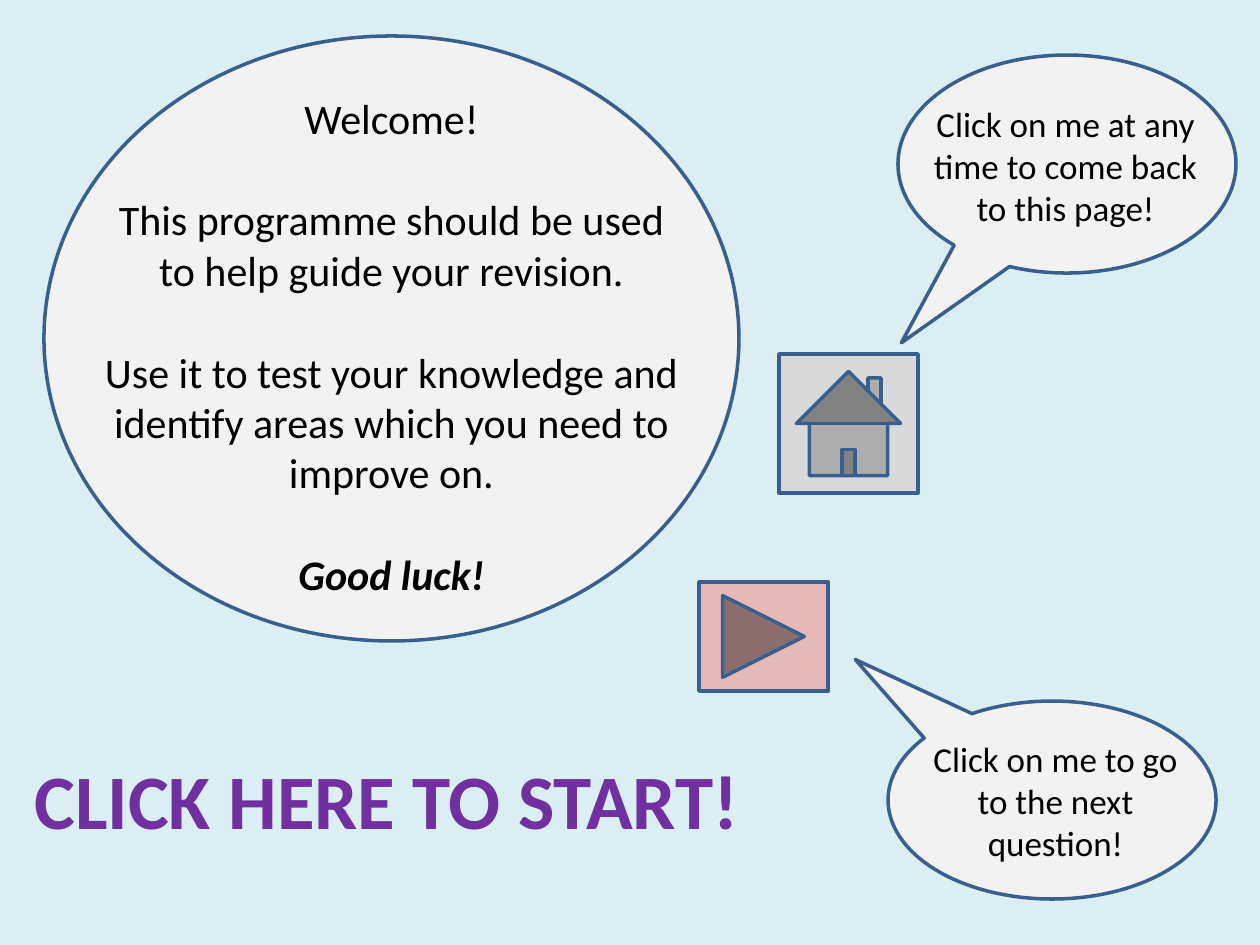
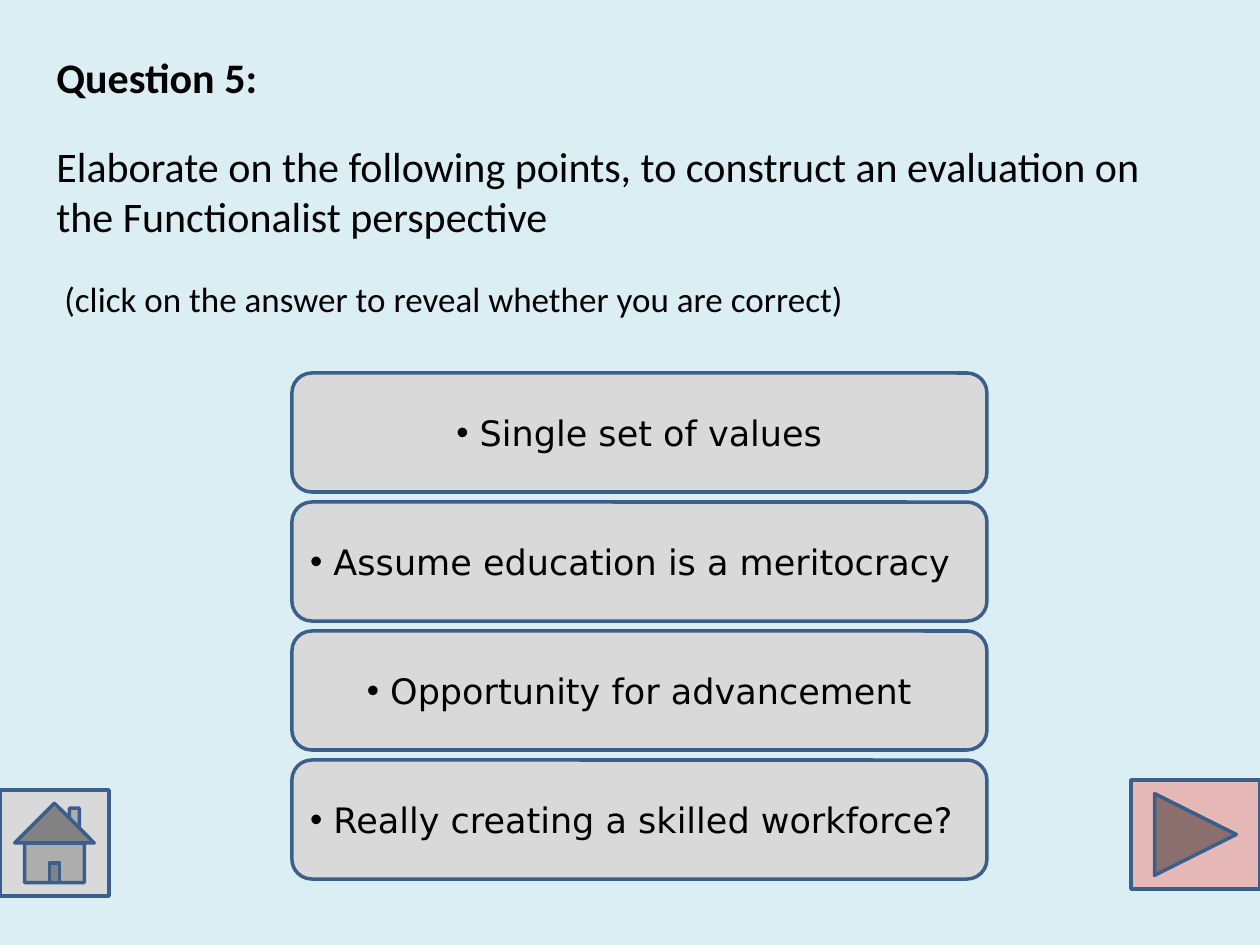
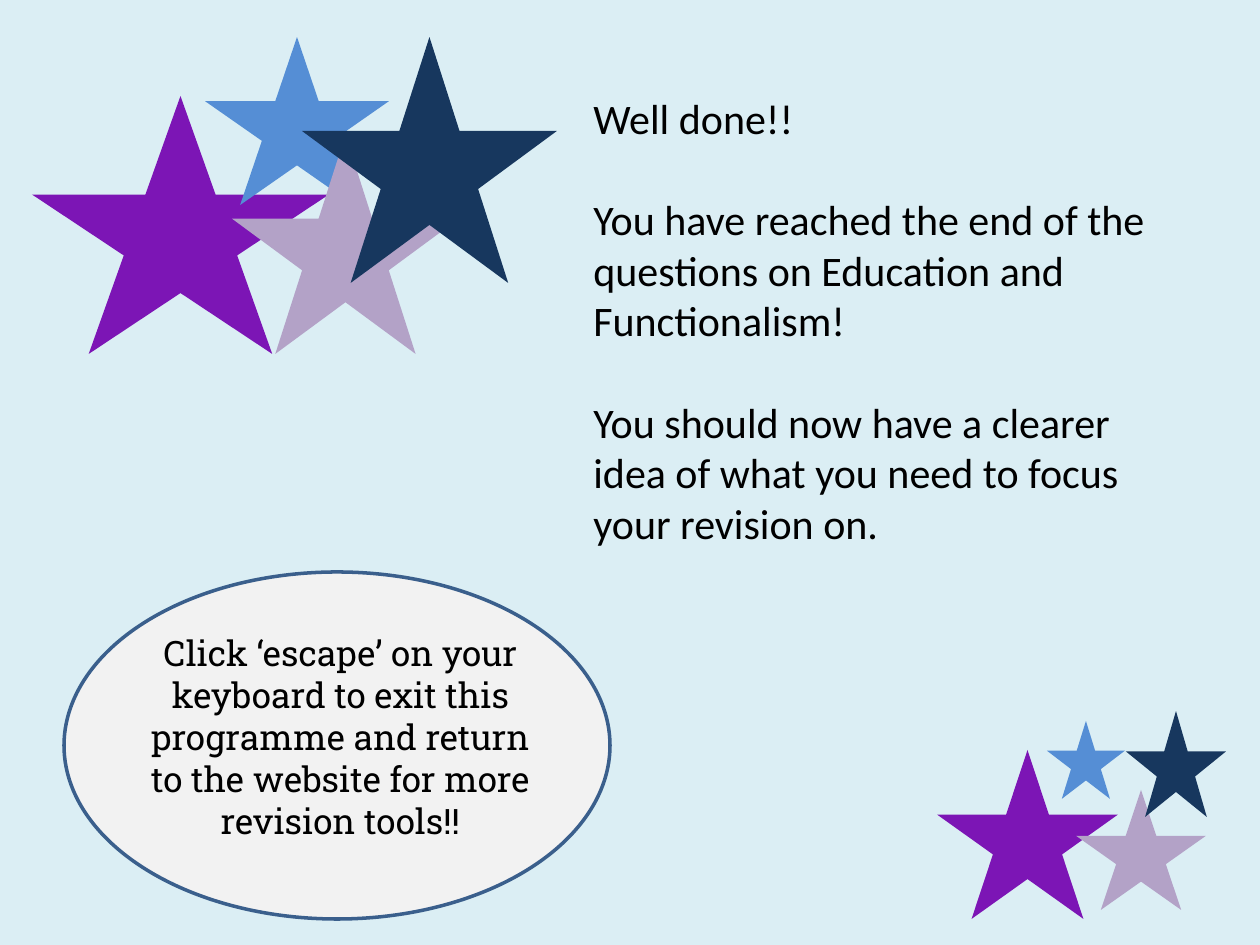
from lxml import etree
from pptx import Presentation
from pptx.dml.color import RGBColor
from pptx.enum.shapes import MSO_SHAPE
from pptx.enum.text import MSO_ANCHOR, PP_ALIGN
from pptx.oxml.ns import qn
from pptx.util import Emu, Pt

SCALE = 914400 / 126  # EMU per px
COLORS = {
    "background": "DBEEF4", "outline": "3A5F8C", "bubble": "F2F2F2",
    "gray": "D9D9D9", "pink": "E6B9B8", "text": "000000", "start": "7030A0",
    "purple": "7C15B5", "blue": "558ED5", "lilac": "B3A2C7", "navy": "17375E",
}
BODY_FONT, ANSWER_FONT, EXIT_FONT = "Calibri", "DejaVu Sans", "Roboto Slab"
BLANK_LINE = 29.3  # pt, one empty line at 24 pt

# Content: a paragraph is (text, size, space before, bold, italic)
WELCOME = [
    ("Welcome!", 24, 0, False, False),
    ("This programme should be used to help guide your revision.", 24, BLANK_LINE, False, False),
    ("Use it to test your knowledge and identify areas which you need to improve on.",
     24, BLANK_LINE, False, False),
    ("Good luck!", 24, BLANK_LINE, True, True),
]
START = [("CLICK HERE TO START!", 44, 0, True, False)]
# Callouts: box, rotation, tail, text box, text
CALLOUTS = [
    ((898, 55, 338, 218), 0, (-0.49, 0.82), (917, 96, 297, 140),
     "Click on me at any time to come back to this page!"),
    ((888, 701, 328, 198), 180, (0.6, 0.71), (907, 731, 297, 140),
     "Click on me to go to the next question!"),
]
QUESTION = [
    ("Question 5:", 24, 0, True, False),
    ("Elaborate on the following points, to construct an evaluation on the "
     "Functionalist perspective", 24, 22, False, False),
    (" (click on the answer to reveal whether you are correct)", 20, 21, False, False),
]
ANSWERS = [
    (" Single set of values", PP_ALIGN.CENTER),
    (" Assume education is a meritocracy", PP_ALIGN.LEFT),
    (" Opportunity for advancement", PP_ALIGN.CENTER),
    (" Really creating a skilled workforce?", PP_ALIGN.LEFT),
]
WELL_DONE = [
    ("Well done!!", 24, 0, False, False),
    ("You have reached the end of the questions on Education and Functionalism!",
     24, BLANK_LINE, False, False),
    ("You should now have a clearer idea of what you need to focus your revision on.",
     24, BLANK_LINE, False, False),
]
EXIT = [("Click ‘escape’ on your keyboard to exit this programme and return to the "
         "website for more revision tools!!", 20, 0, False, False)]
STAR_COLORS = ["purple", "blue", "lilac", "navy"]
STAR_GROUPS = [
    [(32, 96, 297, 258), (205, 37, 184, 168), (232, 135, 227, 219), (302, 37, 255, 246)],
    [(937, 750, 181, 169), (1047, 721, 78, 78), (1076, 790, 130, 120), (1126, 711, 100, 106)],
]


def px(value):
    return Emu(round(value * SCALE))


def rgb(name):
    return RGBColor.from_string(COLORS[name])


def add_slide(prs):
    s = prs.slides.add_slide(prs.slide_layouts[6])
    s.background.fill.solid()
    s.background.fill.fore_color.rgb = rgb("background")
    return s


def add_shape(s, kind, box, fill, outlined=True):
    sp = s.shapes.add_shape(kind, *map(px, box))
    sp.shadow.inherit = False
    sp.fill.solid()
    sp.fill.fore_color.rgb = rgb(fill)
    if outlined:
        sp.line.color.rgb = rgb("outline")
        sp.line.width = Pt(2)
    else:
        sp.line.fill.background()
    return sp


def write(tf, paragraphs, align, font=BODY_FONT, color="text"):
    tf.word_wrap = True
    for i, (text, size, before, bold, italic) in enumerate(paragraphs):
        p = tf.add_paragraph() if i else tf.paragraphs[0]
        p.alignment = align
        p.space_before = Pt(before)
        r = p.add_run()
        r.text = text
        r.font.name, r.font.size = font, Pt(size)
        r.font.bold, r.font.italic = bold, italic
        r.font.color.rgb = rgb(color)


def add_text(s, box, paragraphs, align=PP_ALIGN.CENTER, **style):
    tf = s.shapes.add_textbox(*map(px, box)).text_frame
    write(tf, paragraphs, align, **style)
    return tf


def add_bullet(p):
    pPr = p._p.get_or_add_pPr()
    pPr.set("marL", "0")
    pPr.set("indent", "0")
    etree.SubElement(pPr, qn("a:buFont")).set("typeface", "Arial")
    etree.SubElement(pPr, qn("a:buChar")).set("char", "•")


def add_buttons(s, home, forward):
    add_shape(s, MSO_SHAPE.ACTION_BUTTON_HOME, home, "gray")
    add_shape(s, MSO_SHAPE.ACTION_BUTTON_FORWARD_OR_NEXT, forward, "pink")


def build_welcome(prs):
    s = add_slide(prs)
    add_shape(s, MSO_SHAPE.OVAL, (44, 36, 695, 605), "bubble")
    add_text(s, (84, 86, 615, 522), WELCOME)
    add_buttons(s, (779, 354, 139, 139), (699, 582, 129, 109))
    for box, rotation, tail, text_box, text in CALLOUTS:
        sp = add_shape(s, MSO_SHAPE.OVAL_CALLOUT, box, "bubble")
        sp.rotation = rotation
        sp.adjustments[0], sp.adjustments[1] = tail
        add_text(s, text_box, [(text, 20, 0, False, False)])
    tf = add_text(s, (0, 653, 774, 292), START, color="start")
    tf.vertical_anchor = MSO_ANCHOR.MIDDLE


def build_question(prs):
    s = add_slide(prs)
    add_text(s, (44, 45, 1142, 285), QUESTION, PP_ALIGN.LEFT)
    top, pitch = 373, 129
    for i, (text, align) in enumerate(ANSWERS):
        sp = add_shape(s, MSO_SHAPE.ROUNDED_RECTANGLE, (292, top + i * pitch, 695, 119), "gray")
        tf = sp.text_frame
        tf.vertical_anchor = MSO_ANCHOR.MIDDLE
        write(tf, [(text, 20, 0, False, False)], align, ANSWER_FONT)
        add_bullet(tf.paragraphs[0])
    add_buttons(s, (0, 790, 109, 106), (1131, 780, 129, 109))


def build_end(prs):
    s = add_slide(prs)
    for group in STAR_GROUPS:
        for box, color in zip(group, STAR_COLORS):
            add_shape(s, MSO_SHAPE.STAR_5_POINT, box, color, outlined=False)
    add_text(s, (581, 86, 595, 572), WELL_DONE, PP_ALIGN.LEFT)
    add_shape(s, MSO_SHAPE.OVAL, (64, 572, 546, 347), "bubble")
    add_text(s, (132, 625, 417, 267), EXIT, font=EXIT_FONT)


def main():
    prs = Presentation()
    prs.slide_width, prs.slide_height = px(1260), px(945)
    build_welcome(prs)
    build_question(prs)
    build_end(prs)
    prs.save("out.pptx")


if __name__ == "__main__":
    main()
